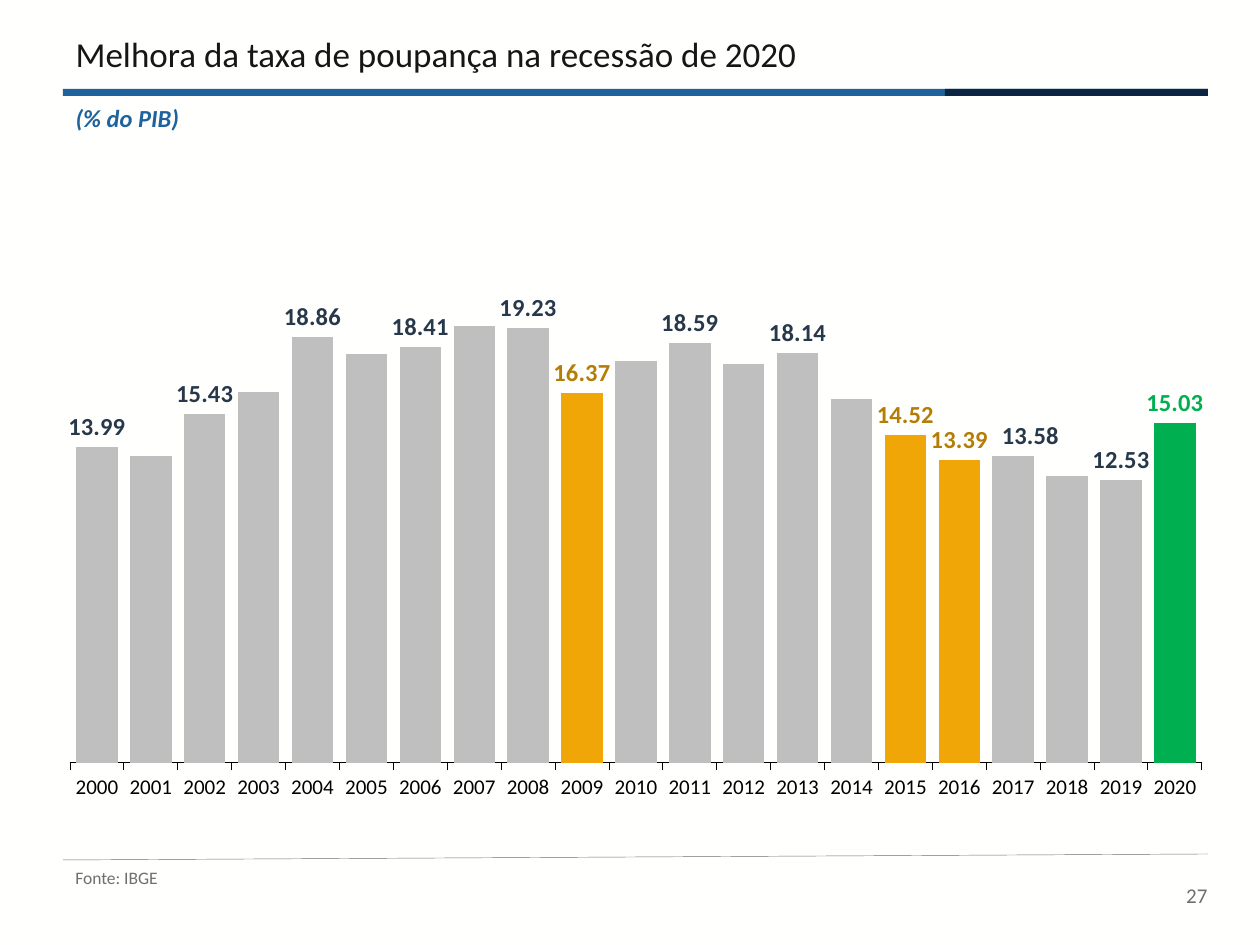
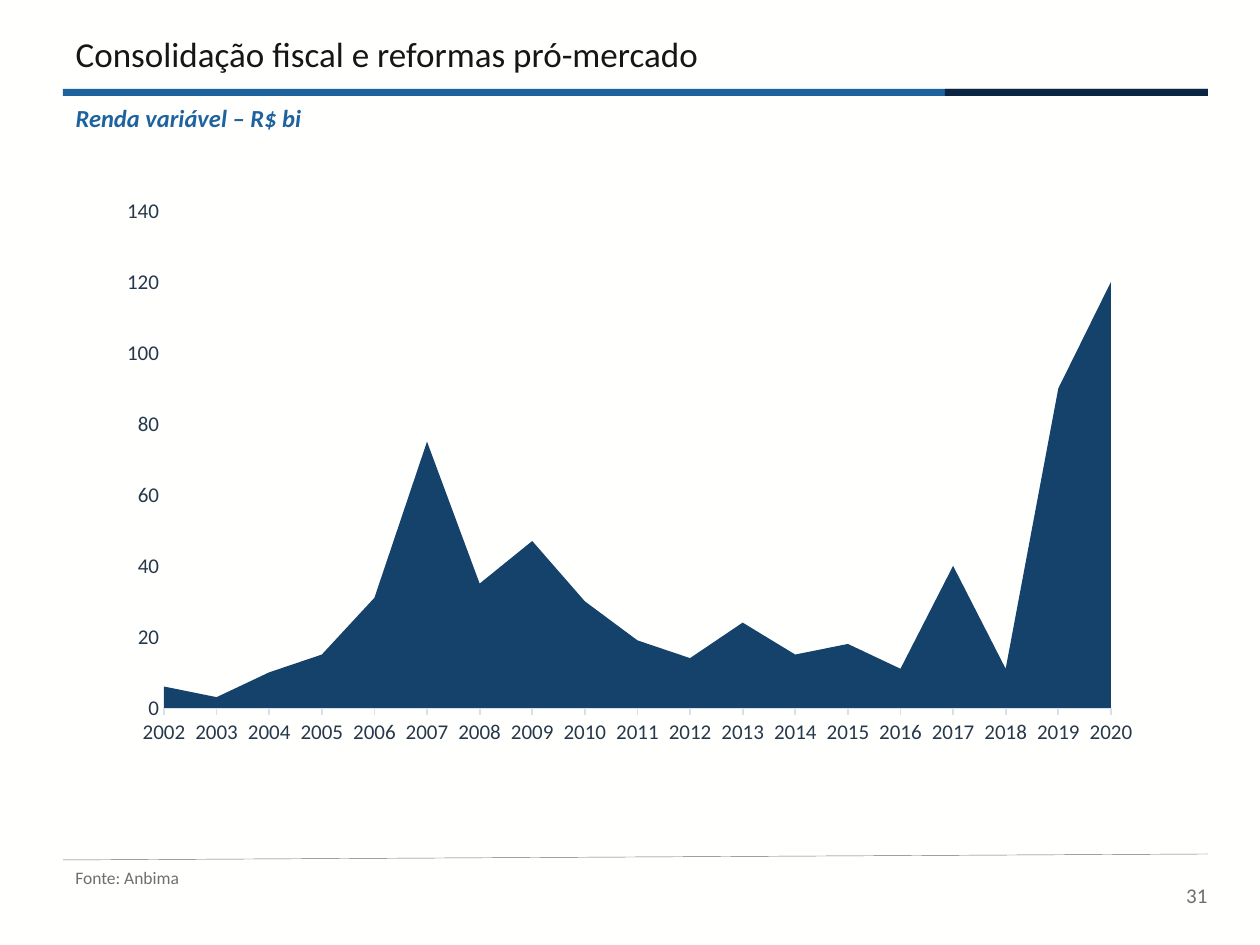
from lxml.etree import SubElement
from pptx import Presentation
from pptx.chart.data import CategoryChartData
from pptx.dml.color import RGBColor
from pptx.enum.chart import XL_CHART_TYPE as CT, XL_LABEL_POSITION as LP, XL_TICK_MARK as TM
from pptx.enum.shapes import MSO_CONNECTOR, MSO_SHAPE
from pptx.enum.text import MSO_ANCHOR, MSO_AUTO_SIZE, PP_ALIGN
from pptx.oxml import parse_xml
from pptx.oxml.ns import nsdecls, qn
from pptx.util import Emu, Pt

FONT = "Calibri"
COLORS = {
    "page": "FFFFFE", "title": "161616", "blue": "1F639E", "navy": "0B2543",
    "muted": "6D706D", "text": "27384B", "axis": "000000", "axis_light": "D8E1EB",
    "bar": "BFBFBF", "recession": "F1A608", "recession_label": "B57D06",
    "recovery": "00B050", "area": "15426A",
}

SAVINGS = [13.99, 13.59, 15.43, 16.41, 18.86, 18.11, 18.41, 19.34, 19.23, 16.37, 17.79,
           18.59, 17.66, 18.14, 16.12, 14.52, 13.39, 13.58, 12.69, 12.53, 15.03]
LABELED_YEARS = [2000, 2002, 2004, 2006, 2008, 2009, 2011, 2013, 2015, 2016, 2017, 2019, 2020]
HIGHLIGHTS = {2009: "recession", 2015: "recession", 2016: "recession", 2020: "recovery"}
LABEL_COLORS = {"recession": "recession_label", "recovery": "recovery"}
EQUITY = [6, 3, 10, 15, 31, 75, 35, 47, 30, 19, 14, 24, 15, 18, 11, 40, 11, 90, 120]


def px(n):
    return Emu(round(n * 914400 / 126))


def rgb(name):
    return RGBColor.from_string(COLORS[name])


def style_font(font, size, color, bold=False, italic=False):
    font.name = FONT
    font.size = Pt(size)
    font.color.rgb = rgb(color)
    font.bold = bold
    font.italic = italic


def write(sp, box, text, size, color, align=PP_ALIGN.LEFT, anchor=MSO_ANCHOR.TOP,
          spacing=0.8, bold=False, italic=False):
    sp.left, sp.top, sp.width, sp.height = map(px, box)
    tf = sp.text_frame
    tf.word_wrap = True
    tf.auto_size = MSO_AUTO_SIZE.NONE
    tf.vertical_anchor = anchor
    p = tf.paragraphs[0]
    p.alignment = align
    p.line_spacing = spacing
    r = p.add_run()
    r.text = text
    style_font(r.font, size, color, bold, italic)


def add_text(s, box, *args, **kwargs):
    write(s.shapes.add_textbox(*map(px, box)), box, *args, **kwargs)


def add_band(s, box, color):
    sp = s.shapes.add_shape(MSO_SHAPE.RECTANGLE, *map(px, box))
    sp.shadow.inherit = False
    sp.fill.solid()
    sp.fill.fore_color.rgb = rgb(color)
    sp.line.fill.background()


def add_header(s, box, title, subtitle):
    x, y, w, h = box
    write(s.shapes.title, (x, y, 827, 58), title, 20, "title", anchor=MSO_ANCHOR.BOTTOM)
    add_band(s, (x, y + 66, w, 7), "blue")
    add_band(s, (x + w - 263, y + 66, 263, 7), "navy")
    write(s.placeholders[1], (x, y + 79, 940, h - 79), subtitle, 14, "blue",
          bold=True, italic=True)


def add_footer(s, box, source, number):
    x, y, w, h = box
    line = s.shapes.add_connector(MSO_CONNECTOR.STRAIGHT, px(x), px(y + 6), px(x + w), px(y))
    line.line.color.rgb = rgb("muted")
    line.line.width = Pt(0.25)
    SubElement(line._element.spPr, qn("a:effectLst"))
    add_text(s, (x, y + 7, 237, 45), source, 10, "muted", spacing=1)
    add_text(s, (x + w - 65, y + h - 50, 77, 50), number, 12, "muted", PP_ALIGN.RIGHT)


def add_page(prs, title, subtitle, source, number):
    s = prs.slides.add_slide(prs.slide_layouts[0])
    s.background.fill.solid()
    s.background.fill.fore_color.rgb = rgb("page")
    add_header(s, (63, 23, 1145, 118), title, subtitle)
    add_footer(s, (63, 854, 1145, 77), source, number)
    return s


def manual_layout(inner):
    return parse_xml(f'<c:layout {nsdecls("c")}><c:manualLayout>{inner}</c:manualLayout></c:layout>')


def place_plot(chart, box, plot):
    sizes = (box[2], box[3]) * 2
    inner = '<c:layoutTarget val="inner"/><c:xMode val="edge"/><c:yMode val="edge"/>'
    for tag, length, size in zip("xywh", plot, sizes):
        inner += f'<c:{tag} val="{length / size:.4f}"/>'
    area = chart._chartSpace.chart.plotArea
    for old in area.findall(qn("c:layout")):
        area.remove(old)
    area.insert(0, manual_layout(inner))


def add_chart(s, kind, box, plot, first_year, values, number_format, top, step, axis_color, axis_width):
    data = CategoryChartData(number_format=number_format)
    data.categories = [str(first_year + i) for i in range(len(values))]
    data.add_series("Series 1", values)
    chart = s.shapes.add_chart(kind, *map(px, box), data).chart
    chart.has_legend = False
    chart.has_title = False
    style_font(chart.font, 12, "text")
    place_plot(chart, box, plot)
    cat, val = chart.category_axis, chart.value_axis
    cat.has_major_gridlines = val.has_major_gridlines = False
    cat.major_tick_mark = TM.OUTSIDE
    cat.format.line.color.rgb = rgb(axis_color)
    cat.format.line.width = Pt(axis_width)
    val.minimum_scale, val.maximum_scale, val.major_unit = 0, top, step
    val.major_tick_mark = TM.NONE
    val.format.line.fill.background()
    val.tick_labels.number_format = number_format
    val.tick_labels.number_format_is_linked = False
    return chart


def fill_series(series, color):
    series.format.fill.solid()
    series.format.fill.fore_color.rgb = rgb(color)


def add_savings_chart(s, box):
    first_year = 2000
    chart = add_chart(s, CT.COLUMN_CLUSTERED, box, (7, 17, 1132, 565), first_year, SAVINGS,
                      "0.00", 25, 5, "axis", 0.5)
    chart.value_axis.visible = False
    style_font(chart.category_axis.tick_labels.font, 12, "axis")
    bars = chart.plots[0]
    bars.gap_width = 30
    bars.vary_by_categories = False
    series = bars.series[0]
    fill_series(series, "bar")
    series.data_labels.show_value = False
    for year, color in HIGHLIGHTS.items():
        fill_series(series.points[year - first_year], color)
    for year in LABELED_YEARS:
        label = series.points[year - first_year].data_label
        color = LABEL_COLORS.get(HIGHLIGHTS.get(year), "text")
        style_font(label.font, 14, color, bold=True)
        label.position = LP.OUTSIDE_END
        if year == 2017:
            label._get_or_add_dLbl().insert(1, manual_layout('<c:x val="0.015"/><c:y val="0"/>'))


def add_equity_chart(s, box):
    chart = add_chart(s, CT.AREA_STACKED, box, (57, 23, 947, 497), 2002, EQUITY,
                      "#,##0", 140, 20, "axis_light", 1)
    chart.plots[0].vary_by_categories = False
    fill_series(chart.plots[0].series[0], "area")
    chart.value_axis._element.find(qn("c:crossBetween")).set("val", "midCat")


def main():
    prs = Presentation()
    prs.slide_width, prs.slide_height = px(1260), px(945)
    s = add_page(prs, "Melhora da taxa de poupança na recessão de 2020", "(% do PIB)",
                 "Fonte: IBGE", "27")
    add_savings_chart(s, (63, 181, 1145, 627))
    s = add_page(prs, "Consolidação fiscal e reformas pró-mercado", "Renda variável – R$ bi",
                 "Fonte: Anbima", "31")
    add_equity_chart(s, (107, 188, 1046, 570))
    prs.save("out.pptx")


if __name__ == "__main__":
    main()
